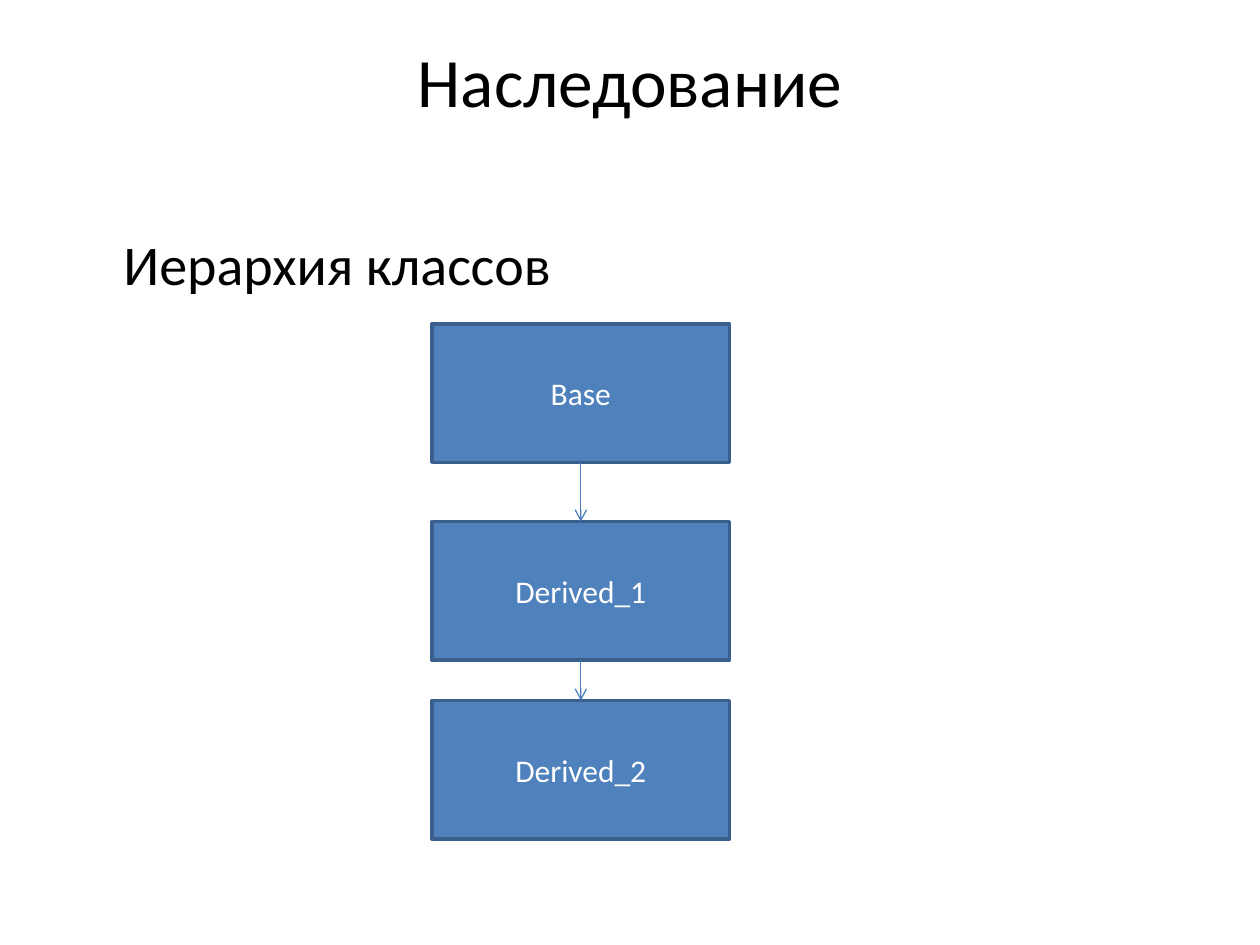
from lxml import etree
from pptx import Presentation
from pptx.dml.color import RGBColor
from pptx.enum.shapes import MSO_CONNECTOR, MSO_SHAPE
from pptx.enum.text import MSO_ANCHOR, PP_ALIGN
from pptx.oxml.ns import qn
from pptx.util import Inches, Pt

FONT = "Calibri"
CLASS_TOPS = {"Base": 2.57, "Derived_1": 4.14, "Derived_2": 5.56}
CLASS_LEFT, CLASS_WIDTH, CLASS_HEIGHT = 3.43, 2.36, 1.1


def color(value):
    return RGBColor.from_string(value)


def write(shape, text, size, hex_color, align, **frame_format):
    frame = shape.text_frame
    frame.word_wrap = True
    for name, value in frame_format.items():
        setattr(frame, name, value)
    para = frame.paragraphs[0]
    para.alignment = align
    span = para.add_run()
    span.text = text
    for name, value in {"name": FONT, "size": Pt(size)}.items():
        setattr(span.font, name, value)
    span.font.color.rgb = color(hex_color)


def add_text(page, box, text, size, align, **frame_format):
    shape = page.shapes.add_textbox(*map(Inches, box))
    write(shape, text, size, "000000", align, **frame_format)


def add_class(page, box, name):
    shape = page.shapes.add_shape(MSO_SHAPE.RECTANGLE, *map(Inches, box))
    shape.shadow.inherit = False
    shape.fill.solid()
    shape.fill.fore_color.rgb = color("4F81BD")
    shape.line.color.rgb = color("3A5F8C")
    shape.line.width = Pt(2)
    write(shape, name, 18, "FFFFFF", PP_ALIGN.CENTER, vertical_anchor=MSO_ANCHOR.MIDDLE)
    return shape


def add_arrow(page, parent, child):
    """Connect the bottom of the parent class to the top of the child class."""
    arrow = page.shapes.add_connector(MSO_CONNECTOR.STRAIGHT, 0, 0, 0, 0)
    arrow.begin_connect(parent, 2)
    arrow.end_connect(child, 0)
    arrow.line.color.rgb = color("4B7EBC")
    arrow.line.width = Pt(0.75)
    etree.SubElement(arrow.line._get_or_add_ln(), qn("a:tailEnd"), type="arrow")
    etree.SubElement(arrow._element.spPr, qn("a:effectLst"))


def add_hierarchy(page):
    classes = [
        add_class(page, (CLASS_LEFT, top, CLASS_WIDTH, CLASS_HEIGHT), name)
        for name, top in CLASS_TOPS.items()
    ]
    for parent, child in zip(classes, classes[1:]):
        add_arrow(page, parent, child)


def main():
    deck = Presentation()
    deck.slide_width, deck.slide_height = Inches(10), Inches(7.5)
    page = deck.slides.add_slide(deck.slide_layouts[6])
    add_text(page, (0.5, 0.3, 9, 1.25), "Наследование", 39.6, PP_ALIGN.CENTER,
             margin_top=0, vertical_anchor=MSO_ANCHOR.TOP)
    add_text(page, (0.5, 1.75, 9, 4.95), "Иерархия классов", 32, PP_ALIGN.LEFT,
             margin_left=Inches(0.48), margin_top=Inches(0.07))
    add_hierarchy(page)
    deck.save("out.pptx")


if __name__ == "__main__":
    main()
